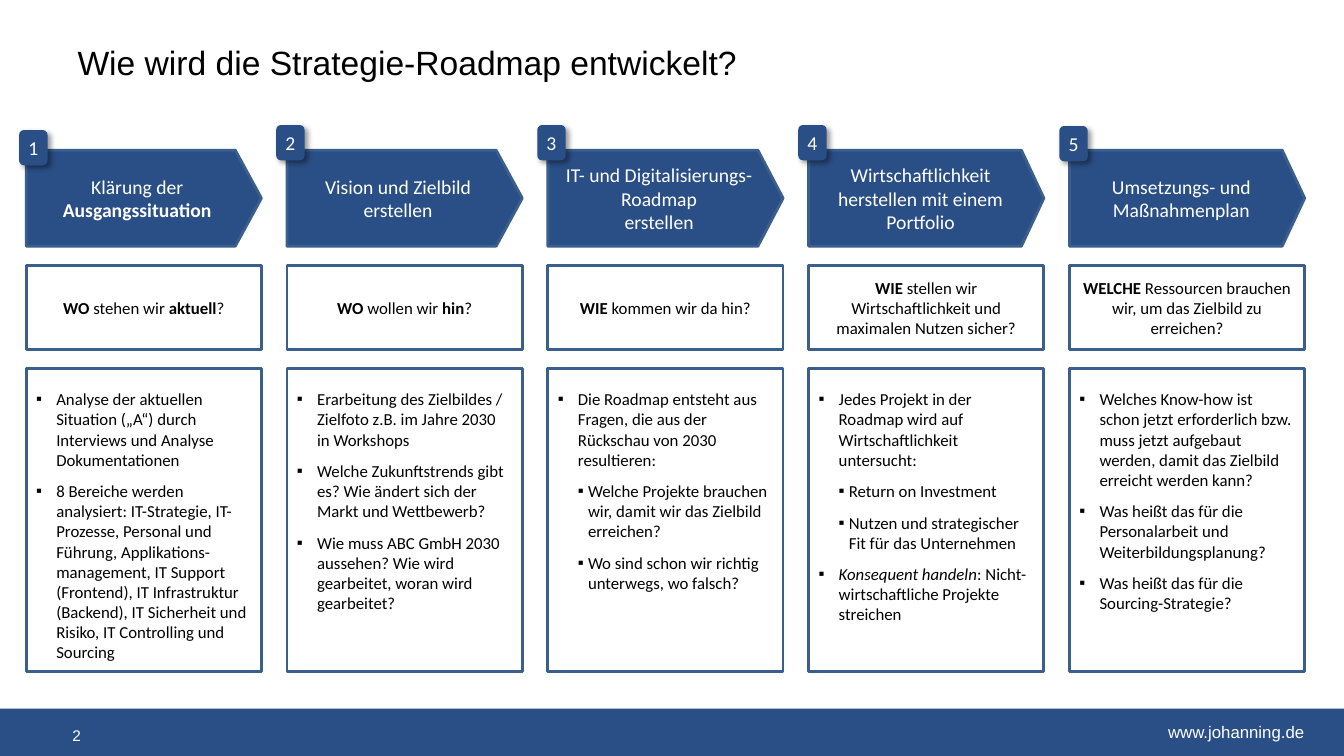
"""Build the strategy roadmap slide with five process steps."""
import lxml.etree
import pptx
import pptx.dml.color
import pptx.enum.shapes
import pptx.enum.text
import pptx.oxml
import pptx.oxml.ns
import pptx.util

TITLE = "Wie wird die Strategie-Roadmap entwickelt?"
WEBSITE = "www.johanning.de"
PAGE = "2"
COLORS = {"blue": "2A4F86", "edge": "3A5F8C", "white": "FFFFFF", "black": "000000"}

STEPS = [
    {
        "badge": (13.7, 92.9), "tip": 0.272,
        "heading": [[("Klärung der ", ""), ("Ausgangssituation", "b")]],
        "question": [("WO", "b"), (" stehen wir ", ""), ("aktuell", "b"), ("?", "")],
        "bullets": [
            (0, [("Analyse der aktuellen Situation („A“) durch Interviews und Analyse Dokumentationen", "")]),
            (0, [("8 Bereiche werden analysiert: IT-Strategie, IT-Prozesse, Personal und Führung, "
                  "Applikations-management, IT Support (Frontend), IT Infrastruktur (Backend), "
                  "IT Sicherheit und Risiko, IT Controlling und Sourcing", "")]),
        ],
    },
    {
        "badge": (197.3, 89.3), "tip": 0.272,
        "heading": [[("Vision und Zielbild", "")], [("erstellen", "")]],
        "question": [("WO ", "b"), ("wollen wir ", ""), ("hin", "b"), ("?", "")],
        "bullets": [
            (0, [("Erarbeitung des Zielbildes / Zielfoto z.B. im Jahre 2030 in Workshops", "")]),
            (0, [("Welche Zukunftstrends gibt es? Wie ändert sich der Markt und Wettbewerb?", "")]),
            (0, [("Wie muss ABC GmbH 2030 aussehen? Wie wird gearbeitet, woran wird gearbeitet?", "")]),
        ],
    },
    {
        "badge": (383.8, 89.3), "tip": 0.262,
        "heading": [[("IT- und Digitalisierungs-Roadmap", "")], [("erstellen", "")]],
        "question": [("WIE ", "b"), ("kommen wir da hin?", "")],
        "bullets": [
            (0, [("Die Roadmap entsteht aus Fragen, die aus der Rückschau von 2030 resultieren:", "")]),
            (1, [("Welche Projekte brauchen wir, damit wir das Zielbild erreichen?", "")]),
            (1, [("Wo sind schon wir richtig unterwegs, wo falsch?", "")]),
        ],
    },
    {
        "badge": (570.2, 89.3), "tip": 0.234,
        "heading": [[("Wirtschaftlichkeit herstellen mit einem", "")], [("Portfolio", "")]],
        "question": [("WIE ", "b"), ("stellen wir Wirtschaftlichkeit und maximalen Nutzen sicher?", "")],
        "bullets": [
            (0, [("Jedes Projekt in der Roadmap wird auf Wirtschaftlichkeit untersucht:", "")]),
            (1, [("Return on Investment", "")]),
            (1, [("Nutzen und strategischer Fit für das Unternehmen", "")]),
            (0, [("Konsequent handeln", "i"), (": Nicht-wirtschaftliche Projekte streichen", "")]),
        ],
    },
    {
        "badge": (756.7, 90), "tip": 0.234,
        "heading": [[("Umsetzungs- und Maßnahmenplan", "")]],
        "question": [("WELCHE", "b"), (" Ressourcen brauchen wir, um das Zielbild zu erreichen?", "")],
        "bullets": [
            (0, [("Welches Know-how ist schon jetzt erforderlich bzw. muss jetzt aufgebaut werden, "
                  "damit das Zielbild erreicht werden kann?", "")]),
            (0, [("Was heißt das für die Personalarbeit und Weiterbildungsplanung?", "")]),
            (0, [("Was heißt das für die Sourcing-Strategie?", "")]),
        ],
    },
]

SLIDE_W, SLIDE_H = 960, 540
LEFT, PITCH, WIDTH = 18.72, 186.3, 168
ARROW, QUESTION, DETAIL = (107.3, 68.6), (189.4, 60.5), (263.5, 216)
BADGE_SIZE = (20.3, 25.2)
BULLET_INDENTS = [(14.4, -14.4), (21.6, -7.2)]
Pt = pptx.util.Pt
SHAPES = pptx.enum.shapes.MSO_SHAPE
ALIGN = pptx.enum.text.PP_ALIGN
ANCHOR = pptx.enum.text.MSO_ANCHOR


def rgb(name):
    """Return the named colour."""
    return pptx.dml.color.RGBColor.from_string(COLORS[name])


def add_box(s, kind, box, fill=None, edge=None):
    """Add a preset shape with optional fill and edge."""
    sp = s.shapes.add_shape(kind, *map(Pt, box))
    sp.shadow.inherit = False
    if fill:
        sp.fill.solid()
        sp.fill.fore_color.rgb = rgb(fill)
    else:
        sp.fill.background()
    if edge:
        sp.line.color.rgb = rgb(edge)
        sp.line.width = Pt(2)
    else:
        sp.line.fill.background()
    return sp


def set_frame(sp, anchor, insets=(7.2, 3.6), wrap=True):
    """Set anchor, wrapping and insets, and return the text frame."""
    tf = sp.text_frame
    tf.word_wrap = wrap
    tf.vertical_anchor = anchor
    tf.margin_left = tf.margin_right = Pt(insets[0])
    tf.margin_top = tf.margin_bottom = Pt(insets[1])
    return tf


def write(tf, paragraphs, size, color, font="Calibri", align=ALIGN.CENTER):
    """Write paragraphs run by run and return them."""
    for i, runs in enumerate(paragraphs):
        p = tf.add_paragraph() if i else tf.paragraphs[0]
        p.alignment = align
        for text, style in runs:
            r = p.add_run()
            r.text = text
            r.font.name, r.font.size = font, Pt(size)
            r.font.color.rgb = rgb(color)
            r.font.bold, r.font.italic = style == "b", style == "i"
    return tf.paragraphs


def add_bullet(p, level):
    """Give a paragraph its square bullet and hanging indent."""
    margin, indent = BULLET_INDENTS[level]
    p.level = level
    pPr = p._p.get_or_add_pPr()
    pPr.set("marL", str(Pt(margin)))
    pPr.set("indent", str(Pt(indent)))
    for tag, key, value in (("a:buFont", "typeface", "Arial"), ("a:buChar", "char", "▪")):
        lxml.etree.SubElement(pPr, pptx.oxml.ns.qn(tag)).set(key, value)


def add_shadow(sp):
    """Give a shape a soft diagonal shadow."""
    effects = sp._element.spPr.find(pptx.oxml.ns.qn("a:effectLst"))
    effects.append(pptx.oxml.parse_xml(
        f'<a:outerShdw {pptx.oxml.ns.nsdecls("a")} blurRad="{Pt(4)}" dist="{Pt(3)}" dir="2700000" '
        'algn="tl" rotWithShape="0"><a:srgbClr val="000000"><a:alpha val="40000"/></a:srgbClr></a:outerShdw>'))


def add_step(s, number, step):
    """Add one column: arrow, badge, question and details."""
    x = LEFT + (number - 1) * PITCH
    sp = add_box(s, SHAPES.PENTAGON, (x, ARROW[0], WIDTH, ARROW[1]), "blue", "edge")
    sp.adjustments[0] = step["tip"]
    write(set_frame(sp, ANCHOR.MIDDLE), step["heading"], 14, "white")

    sp = add_box(s, SHAPES.ROUNDED_RECTANGLE, step["badge"] + BADGE_SIZE, "blue")
    add_shadow(sp)
    write(set_frame(sp, ANCHOR.MIDDLE, (0, 0)), [[(str(number), "")]], 14, "white")

    sp = add_box(s, SHAPES.RECTANGLE, (x, QUESTION[0], WIDTH, QUESTION[1]), edge="edge")
    write(set_frame(sp, ANCHOR.MIDDLE, (7.2, 14.4)), [step["question"]], 12, "black")

    sp = add_box(s, SHAPES.RECTANGLE, (x, DETAIL[0], WIDTH, DETAIL[1]), edge="edge")
    levels, texts = zip(*step["bullets"])
    tf = set_frame(sp, ANCHOR.TOP, (7.2, 14.4))
    for i, p in enumerate(write(tf, texts, 12, "black", align=ALIGN.LEFT)):
        add_bullet(p, levels[i])
        p.space_before, p.space_after = Pt(4 if i else 0), Pt(4)


def main():
    """Build and save the presentation."""
    prs = pptx.Presentation()
    prs.slide_width, prs.slide_height = Pt(SLIDE_W), Pt(SLIDE_H)
    s = prs.slides.add_slide(prs.slide_layouts[5])

    title = s.shapes.title
    title.left, title.top, title.width, title.height = map(Pt, (48.2, 21.6, 662.4, 46))
    write(set_frame(title, ANCHOR.MIDDLE), [[(TITLE, "")]], 24, "black", "Arial", ALIGN.LEFT)

    add_box(s, SHAPES.RECTANGLE, (0, 506.2, SLIDE_W, SLIDE_H - 506.2), "blue")
    for text, box, size, anchor, wrap in (
        (WEBSITE, (827.3, 511.9, 112.3, 21.6), 12, ANCHOR.TOP, False),
        (PAGE, (44.6, 511.2, 224, 28.8), 11, ANCHOR.MIDDLE, True),
    ):
        sp = s.shapes.add_textbox(*map(Pt, box))
        write(set_frame(sp, anchor, wrap=wrap), [[(text, "")]], size, "white", "Arial", ALIGN.LEFT)

    for number, step in enumerate(STEPS, 1):
        add_step(s, number, step)
    prs.save("out.pptx")


if __name__ == "__main__":
    main()
